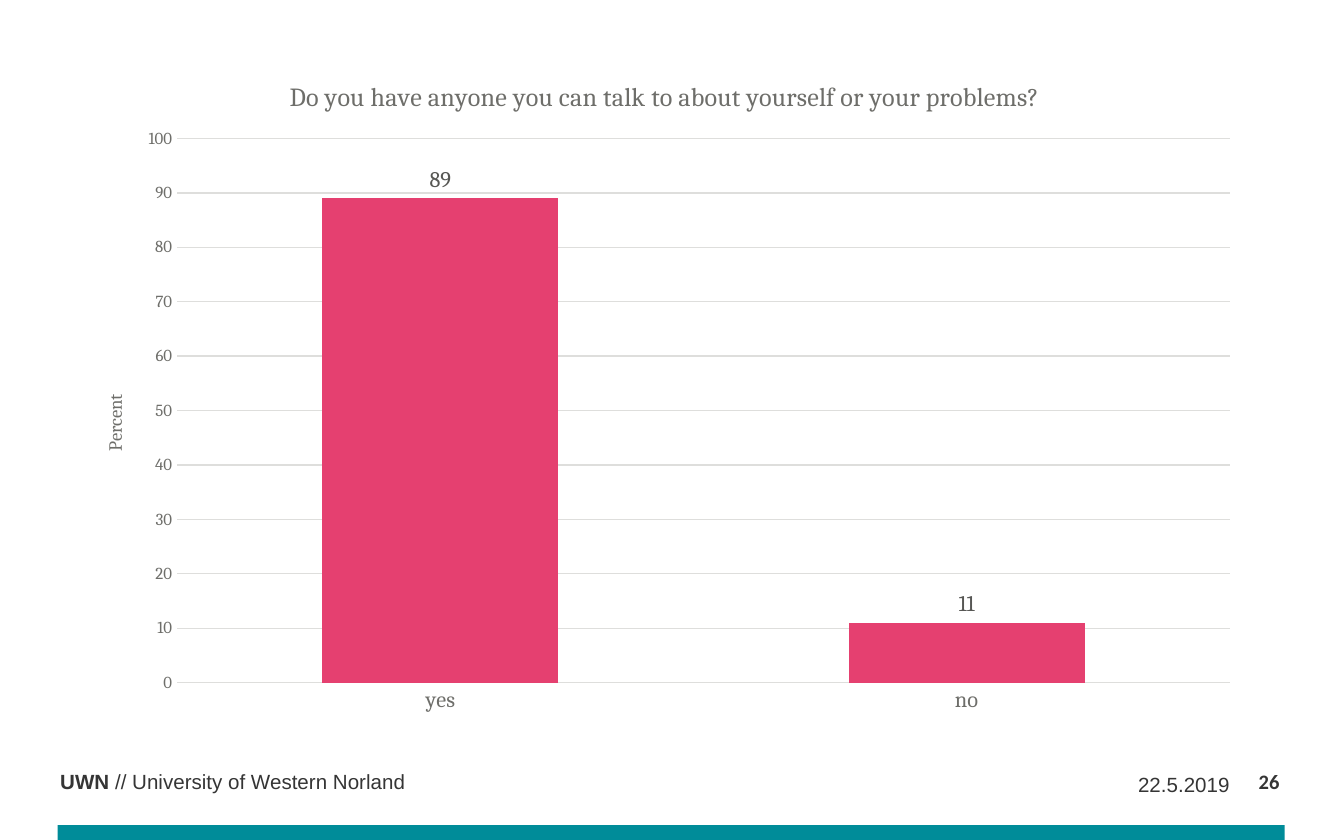
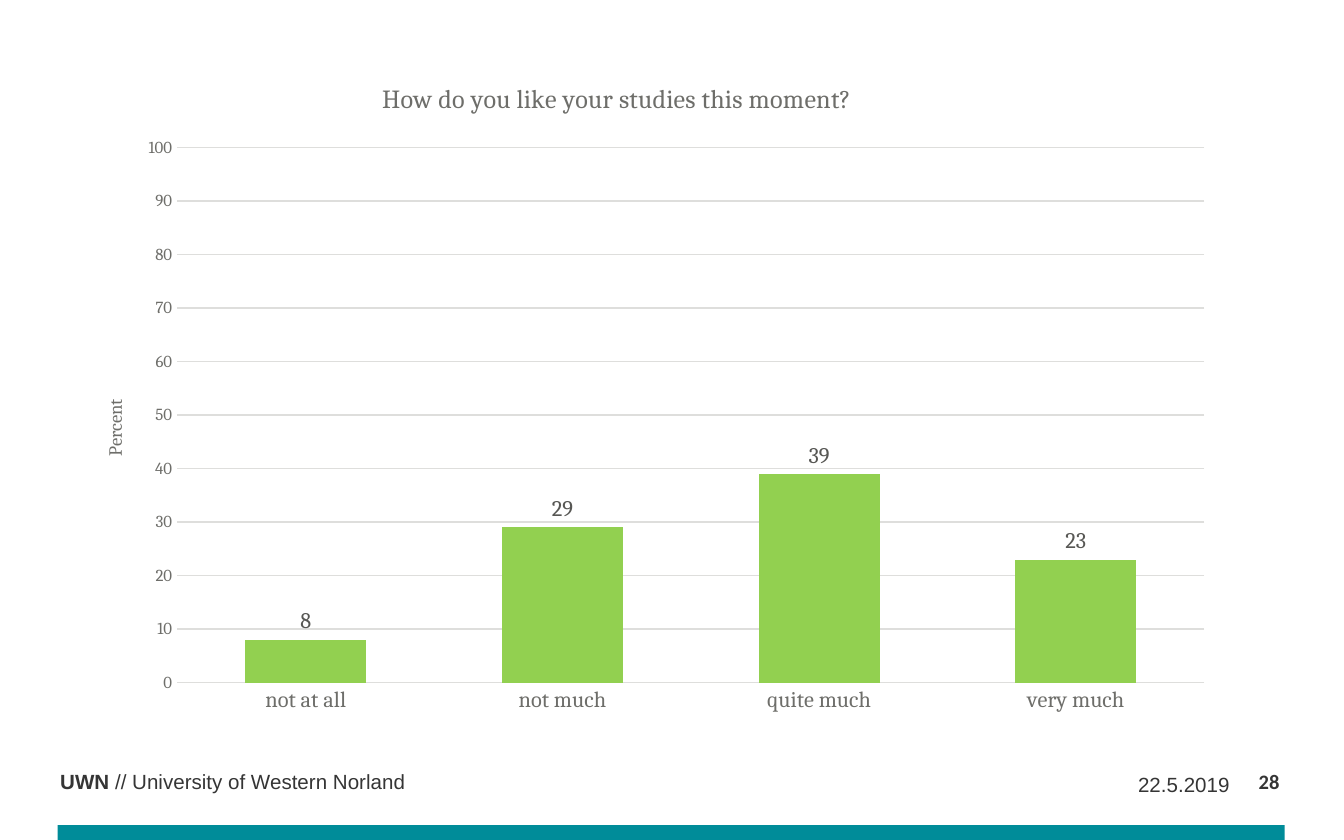
from lxml.etree import SubElement
from pptx import Presentation
from pptx.chart.data import CategoryChartData as Data
from pptx.dml.color import RGBColor as RGB
from pptx.enum.chart import XL_CHART_TYPE as Kind, XL_LABEL_POSITION as Spot
from pptx.enum.chart import XL_TICK_MARK as Tick
from pptx.enum.shapes import MSO_SHAPE as Shape
from pptx.enum.text import MSO_ANCHOR as Anchor, PP_ALIGN as Align
from pptx.oxml.ns import qn
from pptx.util import Pt

PX = 9144  # 100 px to the inch
WHITE = RGB(0xFF, 0xFF, 0xFF)
TEAL = RGB(0x00, 0x8C, 0x99)
PINK = RGB(0xE5, 0x40, 0x70)
GREEN = RGB(0x92, 0xD0, 0x50)
INK = RGB(0x35, 0x35, 0x35)
BLACK = RGB(0x1D, 0x1D, 0x1C)
GREY = RGB(0x6E, 0x6E, 0x6A)
DARK = RGB(0x57, 0x57, 0x54)
RULE = RGB(0xDE, 0xDE, 0xDC)
SERIF = "Cambria"


def write(frame, text, size=11, face="Arial", color=INK, bold=False,
          align=None, lead=""):
    """Fill a frame with one line; lead is a bold start of that line."""
    para = frame.paragraphs[0]
    para.alignment = align
    for part, heavy in ((lead, True), (text, bold)):
        if part:
            run = para.add_run()
            run.text = part
            font = run.font
            font.size, font.name, font.bold = Pt(size), face, heavy
            font.color.rgb = color


def place(node, box, spot, index):
    """Fix a chart part at spot, given in slide px, inside the chart's box."""
    for old in node.findall(qn("c:layout")):
        node.remove(old)
    layout = SubElement(node, qn("c:layout"))
    node.insert(index, layout)
    manual = SubElement(layout, qn("c:manualLayout"))
    if len(spot) == 4:
        SubElement(manual, qn("c:layoutTarget")).set("val", "inner")
    for tag in ("xMode", "yMode"):
        SubElement(manual, qn("c:" + tag)).set("val", "edge")
    x, y, w, h = box
    parts = [(spot[0] - x) / w, (spot[1] - y) / h]
    if len(spot) == 4:
        parts += [spot[2] / w, spot[3] / h]
    for tag, part in zip("xywh", parts):
        SubElement(manual, qn("c:" + tag)).set("val", f"{part:.4f}")


charts = [
    dict(page="26", ask="Do you have anyone you can talk to about yourself or your problems?",
         bars={"yes": 89, "no": 11}, color=PINK, gap=123,
         box=(51, 37, 882, 504), plot=(132, 103, 783, 405),
         head=(212, 56), side=(74, 291)),
    dict(page="28", ask="How do you like your studies this moment?",
         bars={"not at all": 8, "not much": 29, "quite much": 39, "very much": 23},
         color=GREEN, gap=112,
         box=(51, 45, 862, 496), plot=(132, 110, 764, 398),
         head=(281, 57), side=(74, 295)),
]

deck = Presentation()
deck.slide_width, deck.slide_height = 1000 * PX, 625 * PX

for item in charts:
    slide = deck.slides.add_slide(deck.slide_layouts[6])
    slide.background.fill.solid()
    slide.background.fill.fore_color.rgb = WHITE

    # Footer
    name = slide.shapes.add_textbox(35 * PX, 567 * PX, 386 * PX, 29 * PX)
    name.text_frame.word_wrap = True
    write(name.text_frame, " // University of Western Norland", lead="UWN")

    band = slide.shapes.add_shape(Shape.RECTANGLE, 43 * PX, 614 * PX, 913 * PX, 13 * PX)
    band.shadow.inherit = False
    band.fill.solid()
    band.fill.fore_color.rgb = TEAL
    band.line.fill.background()

    for text, x, y, w, top, anchor, style in (
        ("22.5.2019", 819, 572, 96, 0, Anchor.MIDDLE, {}),
        (item["page"], 913, 570, 39, 2, Anchor.TOP, dict(face="Calibri", bold=True)),
    ):
        frame = slide.shapes.add_textbox(x * PX, y * PX, w * PX, 23 * PX).text_frame
        frame.word_wrap = True
        frame.margin_left = frame.margin_right = frame.margin_bottom = 0
        frame.margin_top = top * PX
        frame.vertical_anchor = anchor
        write(frame, text, align=Align.RIGHT, **style)

    # Chart
    data = Data(number_format="#,##0")
    data.categories = list(item["bars"])
    data.add_series("Series 1", list(item["bars"].values()))
    box = item["box"]
    chart = slide.shapes.add_chart(
        Kind.COLUMN_CLUSTERED, *(n * PX for n in box), data).chart
    chart.has_legend = False
    chart.font.size, chart.font.name = Pt(10), SERIF
    chart.font.color.rgb = BLACK

    chart.has_title = True
    write(chart.chart_title.text_frame, item["ask"], size=14, face=SERIF, color=GREY)
    place(chart.chart_title.element, box, item["head"], 1)
    place(chart.element.chart.plotArea, box, item["plot"], 0)

    cat, val = chart.category_axis, chart.value_axis
    for axis, size in ((cat, 12), (val, 9)):
        axis.major_tick_mark = axis.minor_tick_mark = Tick.NONE
        font = axis.tick_labels.font
        font.size, font.name = Pt(size), SERIF
        font.color.rgb = GREY
    val.minimum_scale, val.maximum_scale, val.major_unit = 0, 100, 10
    val.format.line.fill.background()
    val.has_major_gridlines = True
    for line in (cat.format.line, val.major_gridlines.format.line):
        line.width = Pt(0.75)
        line.color.rgb = RULE

    val.has_title = True
    side = val.axis_title
    write(side.text_frame, "Percent", size=10, face=SERIF, color=GREY)
    turn = side.element.find(".//" + qn("a:bodyPr"))
    turn.set("rot", "-5400000")
    turn.set("vert", "horz")
    place(side.element, box, item["side"], 1)

    plot = chart.plots[0]
    plot.gap_width, plot.overlap = item["gap"], -27
    plot.vary_by_categories = False
    fill = plot.series[0].format.fill
    fill.solid()
    fill.fore_color.rgb = item["color"]
    plot.has_data_labels = True
    labels = plot.data_labels
    labels.show_value = True
    labels.position = Spot.OUTSIDE_END
    labels.number_format, labels.number_format_is_linked = "#,##0", False
    labels.font.size, labels.font.name = Pt(12), SERIF
    labels.font.color.rgb = DARK

deck.save("out.pptx")
